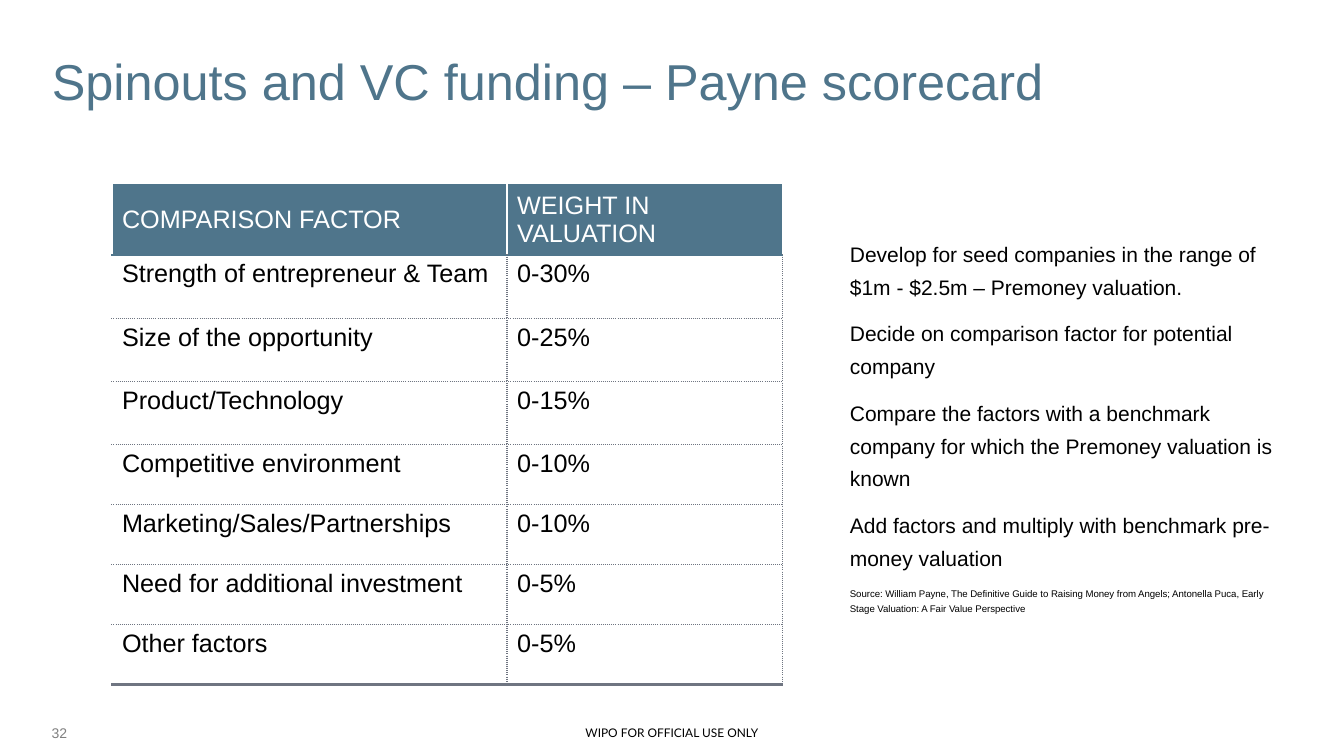
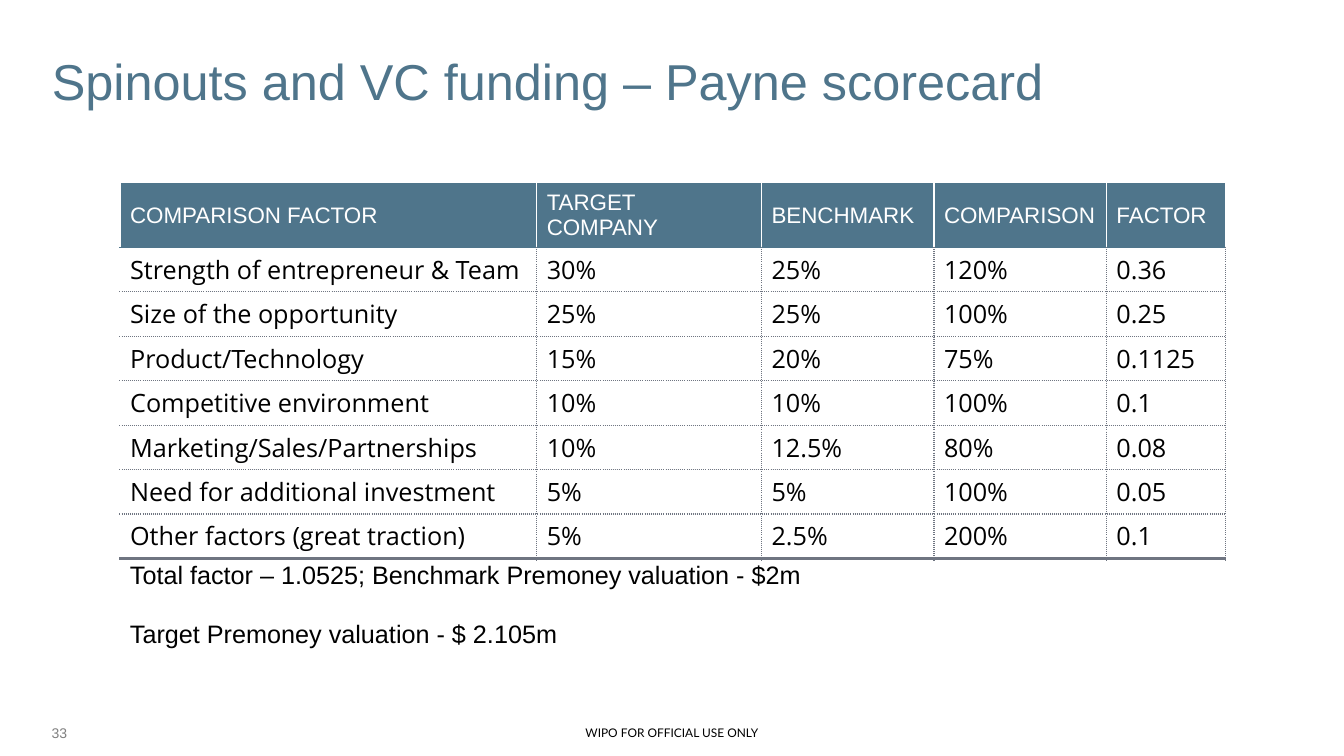
from lxml import etree
from pptx import Presentation
from pptx import util as u
from pptx.dml.color import RGBColor
from pptx.enum import text
from pptx.oxml import ns

HUES = {"teal": "4F758B", "rule": "6F7581", "white": "FFFFFF",
        "black": "000000", "grey": "808080"}
TITLE = "Spinouts and VC funding – Payne scorecard"
FOOTER = "WIPO FOR OFFICIAL USE ONLY"
FACTORS = ["Strength of entrepreneur & Team", "Size of the opportunity",
           "Product/Technology", "Competitive environment",
           "Marketing/Sales/Partnerships", "Need for additional investment"]
SOURCE = ("Source: William Payne, The Definitive Guide to Raising Money from Angels; "
          "Antonella Puca, Early Stage Valuation: A Fair Value Perspective")

# Boxes, columns and rows are percentages of the slide's width and height.
PAGES = [
    {
        "number": "32", "corner": (8.33, 24.4),
        "cols": [29.4, 20.5], "rows": [8.87] + [8.35] * 3 + [7.94] * 4,
        "head": ["COMPARISON FACTOR", "WEIGHT IN VALUATION"], "head size": 18,
        "font": "Arial", "last": "Other factors",
        "values": [["0-30%", "0-25%", "0-15%", "0-10%", "0-10%", "0-5%", "0-5%"]],
        "box": (62.5, 30.27, 33.5, 56.27), "spacing": 1.3,
        "notes": [
            ("Develop for seed companies in the range of $1m - $2.5m – Premoney valuation.", 15),
            ("Decide on comparison factor for potential company", 15),
            ("Compare the factors with a benchmark company for which the Premoney valuation is known", 15),
            ("Add factors and multiply with benchmark pre-money valuation", 15),
            (SOURCE, 6.9),
        ],
    },
    {
        "number": "33", "corner": (8.93, 24.27),
        "cols": [31, 16.73, 12.83, 12.83, 8.85], "rows": [8] + [5.88] * 7,
        "head": ["COMPARISON FACTOR", "TARGET COMPANY", "BENCHMARK", "COMPARISON", "FACTOR"],
        "head size": 16, "font": "Open Sans", "last": "Other factors (great traction)",
        "values": [
            ["30%", "25%", "15%", "10%", "10%", "5%", "5%"],
            ["25%", "25%", "20%", "10%", "12.5%", "5%", "2.5%"],
            ["120%", "100%", "75%", "100%", "80%", "100%", "200%"],
            ["0.36", "0.25", "0.1125", "0.1", "0.08", "0.05", "0.1"],
        ],
        "box": (8.93, 71.33, 82.22, 16.4), "spacing": 1.5,
        "notes": [
            ("Total factor – 1.0525; Benchmark Premoney valuation - $2m", 18),
            ("Target Premoney valuation - $ 2.105m", 18),
        ],
    },
]


def style(par, size, hue, font="Arial"):
    for run in par.runs:
        run.font.size, run.font.name = u.Pt(size), font
        run.font.color.rgb = RGBColor.from_string(HUES[hue])


def edge(cell, sides):
    """Draw cell borders, given as (hue, points, dash) in left, right, top, bottom order."""
    props = cell._tc.get_or_add_tcPr()
    for spot, (side, (hue, width, dash)) in enumerate(zip("LRTB", sides)):
        line = etree.Element(ns.qn("a:ln" + side), w=str(u.Pt(width)))
        fill = etree.SubElement(line, ns.qn("a:solidFill"))
        etree.SubElement(fill, ns.qn("a:srgbClr"), val=HUES[hue])
        etree.SubElement(line, ns.qn("a:prstDash"), val=dash)
        props.insert(spot, line)


deck = Presentation()
deck.slide_width, deck.slide_height = u.Inches(13.33), u.Inches(7.5)
wide, high = deck.slide_width / 100, deck.slide_height / 100
dot, thick = ("rule", 1, "sysDot"), ("rule", 3, "solid")
clear, band = ("white", 1, "solid"), ("teal", 1, "solid")

for page in PAGES:
    slide = deck.slides.add_slide(deck.slide_layouts[5])

    title = slide.shapes.title
    title.left, title.top = int(3.1 * wide), int(6.93 * high)
    title.width, title.height = int(86.3 * wide), int(19.33 * high)
    title.text_frame.text = TITLE
    title.text_frame.vertical_anchor = text.MSO_ANCHOR.TOP
    par = title.text_frame.paragraphs[0]
    par.alignment, par.line_spacing = text.PP_ALIGN.LEFT, 0.9
    style(par, 36, "teal")

    frames = []
    for x, y, w, h in [(0, 95.33, 100, 3.2), (3.1, 92.67, 9.1, 5.33), page["box"]]:
        box = slide.shapes.add_textbox(int(x * wide), int(y * high),
                                       int(w * wide), int(h * high))
        box.text_frame.word_wrap = True
        frames.append(box.text_frame)
    footer, number, notes = frames

    footer.text = FOOTER
    footer.paragraphs[0].alignment = text.PP_ALIGN.CENTER
    style(footer.paragraphs[0], 8.5, "black", "Lato")

    number.text = page["number"]
    number.vertical_anchor, number.margin_bottom = text.MSO_ANCHOR.BOTTOM, 0
    style(number.paragraphs[0], 10, "grey")

    notes.text = "\n".join(note for note, size in page["notes"])
    for i, (par, (note, size)) in enumerate(zip(notes.paragraphs, page["notes"])):
        par.line_spacing = page["spacing"]
        if i:
            par.space_before = u.Pt(10)
        style(par, size, "black")

    rows = [page["head"], *zip(FACTORS + [page["last"]], *page["values"])]
    x, y = page["corner"]
    table = slide.shapes.add_table(
        len(rows), len(page["cols"]), int(x * wide), int(y * high),
        int(sum(page["cols"]) * wide), int(sum(page["rows"]) * high)).table
    table.first_row = table.horz_banding = False
    for col, share in zip(table.columns, page["cols"]):
        col.width = int(share * wide)
    for r, (row, share) in enumerate(zip(rows, page["rows"])):
        table.rows[r].height = int(share * high)
        for c, words in enumerate(row):
            cell = table.cell(r, c)
            cell.text_frame.text = words
            par = cell.text_frame.paragraphs[0]
            if r == 0:
                cell.vertical_anchor = text.MSO_ANCHOR.MIDDLE
                cell.fill.solid()
                cell.fill.fore_color.rgb = RGBColor.from_string(HUES["teal"])
                style(par, page["head size"], "white")
                edge(cell, [clear, clear, band, band])
            else:
                cell.fill.background()
                style(par, 18, "black", page["font"])
                edge(cell, [dot if c else clear, dot, band if r == 1 else dot,
                            thick if r == len(rows) - 1 else dot])

deck.save("out.pptx")
